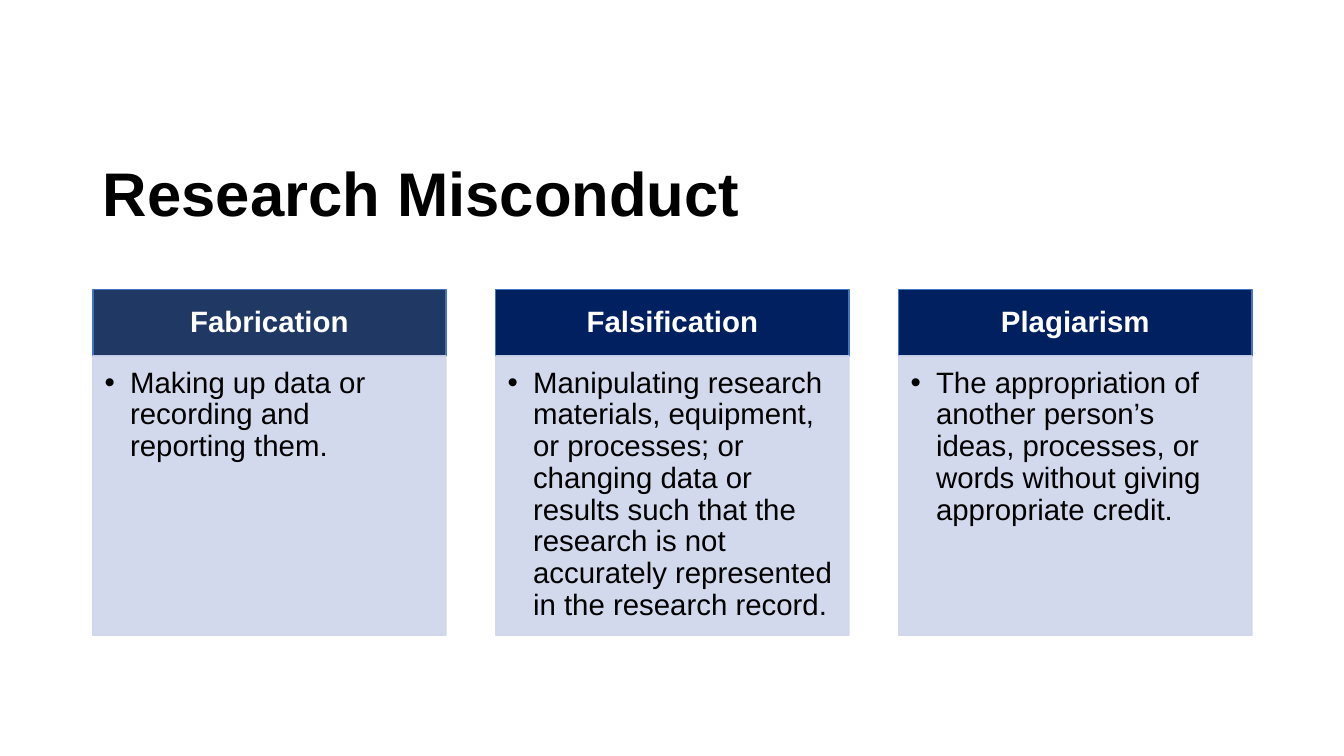
from lxml.etree import SubElement
from pptx import Presentation
from pptx.dml.color import RGBColor
from pptx.enum.shapes import MSO_SHAPE as Shape
from pptx.enum.text import MSO_ANCHOR as Anchor, MSO_AUTO_SIZE as AutoSize, PP_ALIGN as Align
from pptx.oxml.ns import qn
from pptx.util import Cm, Pt

BLACK = RGBColor(0x00, 0x00, 0x00)
WHITE = RGBColor(0xFF, 0xFF, 0xFF)
SLATE = RGBColor(0x20, 0x38, 0x64)
NAVY = RGBColor(0x00, 0x20, 0x60)
BLUE = RGBColor(0x44, 0x72, 0xC4)
PALE = RGBColor(0xCF, 0xD5, 0xEA)

LEFT, WIDTH = 2.34, 29.21
CARD_WIDTH, HEAD_HEIGHT = 8.9, 1.68

CARDS = [
    ("Fabrication", SLATE, "Making up data or recording and reporting them."),
    ("Falsification", NAVY,
     "Manipulating research materials, equipment, or processes; or changing data "
     "or results such that the research is not accurately represented in the "
     "research record."),
    ("Plagiarism", NAVY,
     "The appropriation of another person’s ideas, processes, or words without "
     "giving appropriate credit."),
]


def set_attrs(obj, values):
    for name, value in values.items():
        setattr(obj, name, value)


def write(sp, text, size, color, bold, align, anchor, insets=None, bullet=False):
    tf = sp.text_frame
    set_attrs(tf, dict(text=text, word_wrap=True, auto_size=AutoSize.NONE,
                       vertical_anchor=anchor))
    if insets:
        sides = ("margin_left", "margin_top", "margin_right", "margin_bottom")
        set_attrs(tf, dict(zip(sides, map(Cm, insets))))
    p = tf.paragraphs[0]
    set_attrs(p, dict(alignment=align, line_spacing=0.9))
    if bullet:
        pPr = p._p.get_or_add_pPr()
        set_attrs_xml = {"marL": Cm(0.64), "indent": -Cm(0.64)}
        for name, value in set_attrs_xml.items():
            pPr.set(name, str(int(value)))
        SubElement(pPr, qn("a:buFont"), typeface="Arial")
        SubElement(pPr, qn("a:buChar"), char="•")
    r = p.runs[0]
    set_attrs(r.font, dict(name="Arial", size=Pt(size), bold=bold))
    r.font.color.rgb = color


def add_title(slide, x, y, w, h):
    sp = slide.shapes.title
    set_attrs(sp, dict(left=Cm(x), top=Cm(y), width=Cm(w), height=Cm(h)))
    write(sp, "Research Misconduct", 44, BLACK, True, Align.LEFT, Anchor.MIDDLE)


def add_panel(slide, x, y, w, h, fill, line, alpha=None):
    sp = slide.shapes.add_shape(Shape.RECTANGLE, Cm(x), Cm(y), Cm(w), Cm(h))
    sp.shadow.inherit = False
    sp.fill.solid()
    sp.fill.fore_color.rgb = fill
    sp.line.color.rgb = line
    sp.line.width = Pt(1)
    if alpha:
        for clr in sp._element.spPr.iter(qn("a:srgbClr")):
            SubElement(clr, qn("a:alpha"), val=str(alpha * 1000))
    return sp


def add_card(slide, x, y, w, h, heading, fill, text):
    # Heading bar
    sp = add_panel(slide, x, y, w, HEAD_HEIGHT, fill, BLUE)
    write(sp, heading, 21, WHITE, True, Align.CENTER, Anchor.MIDDLE,
          (0.41, 0.23, 0.41, 0.23))
    # Definition below it
    sp = add_panel(slide, x, y + HEAD_HEIGHT, w, h - HEAD_HEIGHT, PALE, PALE, 90)
    write(sp, text, 21, BLACK, False, Align.LEFT, Anchor.TOP,
          (0.3, 0.3, 0.41, 0.46), bullet=True)


def add_cards(slide, x, y, w, h):
    # Equal gaps: first card at the left edge, last at the right
    pitch = (w - CARD_WIDTH) / (len(CARDS) - 1)
    for i, card in enumerate(CARDS):
        add_card(slide, x + i * pitch, y, CARD_WIDTH, h, *card)


def main():
    prs = Presentation()
    set_attrs(prs, dict(slide_width=Cm(33.87), slide_height=Cm(19.05)))
    slide = prs.slides.add_slide(prs.slide_layouts[5])
    add_title(slide, LEFT, 3.71, WIDTH, 2.49)
    add_cards(slide, LEFT, 7.29, WIDTH, 8.72)
    prs.save("out.pptx")


if __name__ == "__main__":
    main()
